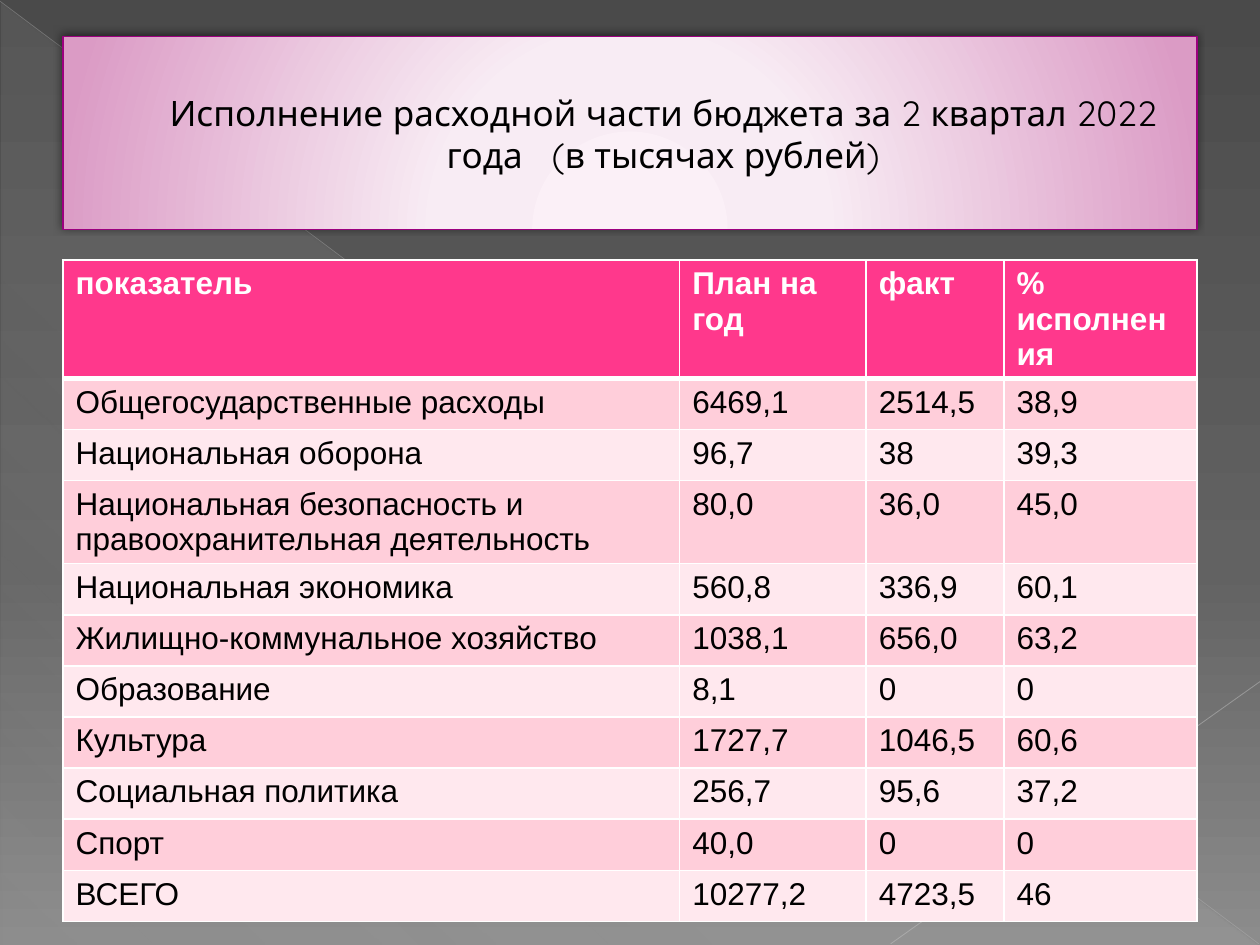
from lxml import etree
from pptx import Presentation
from pptx.dml.color import RGBColor
from pptx.enum.shapes import MSO_CONNECTOR, MSO_SHAPE
from pptx.enum.text import MSO_ANCHOR, PP_ALIGN
from pptx.oxml import parse_xml
from pptx.oxml.ns import qn
from pptx.util import Pt

# Content
TITLE = "Исполнение расходной части бюджета за 2 квартал 2022 года   (в тысячах рублей)"
ROWS = [
    ("показатель", "План на год", "факт", "% исполнения"),
    ("Общегосударственные расходы", "6469,1", "2514,5", "38,9"),
    ("Национальная оборона", "96,7", "38", "39,3"),
    ("Национальная безопасность и правоохранительная деятельность", "80,0", "36,0", "45,0"),
    ("Национальная экономика", "560,8", "336,9", "60,1"),
    ("Жилищно-коммунальное хозяйство", "1038,1", "656,0", "63,2"),
    ("Образование", "8,1", "0", "0"),
    ("Культура", "1727,7", "1046,5", "60,6"),
    ("Социальная политика", "256,7", "95,6", "37,2"),
    ("Спорт", "40,0", "0", "0"),
    ("ВСЕГО", "10277,2", "4723,5", "46"),
]

# Layout, in points
WIDTH, HEIGHT = 720, 540
LEFT = 36
COLUMNS = (352.4, 106.6, 78.8, 110.2)
ROW_HEIGHT = 29.2
# start, end, colour, line width, opacity in percent
RAYS = [
    ((0, 0.7), (719.3, 539.3), RGBColor(0xBF, 0xBF, 0xBF), 0.39, 35),
    ((720, 389.5), (509, 539.3), RGBColor(0xC6, 0xC6, 0xC6), 0.47, 45),
]

# Colours; gradient stops are position, colour, opacity in percent
BLACK = RGBColor(0x00, 0x00, 0x00)
WHITE = RGBColor(0xFF, 0xFF, 0xFF)
PURPLE = RGBColor(0x9C, 0x00, 0x7F)
HEADER = RGBColor(0xFF, 0x38, 0x8C)
BANDS = (RGBColor(0xFF, 0xE8, 0xEE), RGBColor(0xFF, 0xCE, 0xDA))
SHEEN = RGBColor(0xD2, 0xD2, 0xD2)
BACKDROP = [(0, RGBColor(0x4A, 0x4A, 0x4A), 100), (60, RGBColor(0x62, 0x62, 0x62), 100),
            (100, RGBColor(0x8C, 0x8C, 0x8C), 100)]
SHEEN_STOPS = [(0, SHEEN, 10), (70, SHEEN, 8), (100, SHEEN, 1)]
TITLE_STOPS = [(0, RGBColor(0xFB, 0xF0, 0xF7), 100), (34, RGBColor(0xF8, 0xEC, 0xF4), 100),
               (100, RGBColor(0xDB, 0x9B, 0xC5), 100)]
NS = 'xmlns:a="http://schemas.openxmlformats.org/drawingml/2006/main"'


def color_xml(color, alpha=100):
    return f'<a:srgbClr val="{color}"><a:alpha val="{alpha * 1000}"/></a:srgbClr>'


def set_gradient(parent, stops, shade):
    """Replace the solid fill in parent with a gradient."""
    gs = "".join(f'<a:gs pos="{pos * 1000}">{color_xml(c, a)}</a:gs>' for pos, c, a in stops)
    grad = parse_xml(f'<a:gradFill {NS} rotWithShape="1"><a:gsLst>{gs}</a:gsLst>{shade}</a:gradFill>')
    parent.replace(parent.find(qn("a:solidFill")), grad)


def linear(angle):
    return f'<a:lin ang="{angle * 60000}" scaled="0"/>'


def set_text(tf, text, font="Arial", size=18, color=BLACK, bold=False, align=PP_ALIGN.LEFT):
    tf.word_wrap = True
    p = tf.paragraphs[0]
    p.alignment = align
    r = p.add_run()
    r.text = text
    r.font.name, r.font.size, r.font.bold = font, Pt(size), bold
    r.font.color.rgb = color
    return p


def set_borders(cell, widths):
    """Draw white borders, which must stand before the cell's fill."""
    pr = cell._tc.get_or_add_tcPr()
    for i, (side, width) in enumerate(widths.items()):
        pr.insert(i, parse_xml(f'<a:ln{side} {NS} w="{Pt(width)}"><a:solidFill>{color_xml(WHITE)}'
                               f'</a:solidFill></a:ln{side}>'))


def add_box(s, kind, left, top, width, height, stops, shade):
    sp = s.shapes.add_shape(kind, Pt(left), Pt(top), Pt(width), Pt(height))
    sp.shadow.inherit = False
    sp.fill.solid()
    set_gradient(sp._element.spPr, stops, shade)
    return sp


prs = Presentation()
prs.slide_width, prs.slide_height = Pt(WIDTH), Pt(HEIGHT)
s = prs.slides.add_slide(prs.slide_layouts[6])

# Background with sheen and rays
s.background.fill.solid()
set_gradient(s.element.find(".//" + qn("p:bgPr")), BACKDROP, linear(90))
sheen = add_box(s, MSO_SHAPE.RIGHT_TRIANGLE, 0.7, 1.4, 718.6, 538.6, SHEEN_STOPS, linear(133))
sheen.line.fill.background()
for start, end, color, width, alpha in RAYS:
    ray = s.shapes.add_connector(MSO_CONNECTOR.STRAIGHT, *(Pt(v) for v in start + end))
    ray.line.color.rgb, ray.line.width = color, Pt(width)
    clr = ray._element.spPr.find(".//" + qn("a:srgbClr"))
    etree.SubElement(clr, qn("a:alpha"), val=str(alpha * 1000))
    etree.SubElement(ray._element.spPr, qn("a:effectLst"))

# Title panel
radial = '<a:path path="circle"><a:fillToRect l="50000" t="155000" r="50000" b="-55000"/></a:path>'
panel = add_box(s, MSO_SHAPE.RECTANGLE, LEFT, 21, sum(COLUMNS), 110, TITLE_STOPS, radial)
panel.line.color.rgb, panel.line.width = PURPLE, Pt(0.75)
panel._element.spPr.find(qn("a:effectLst")).append(parse_xml(
    f'<a:outerShdw {NS} blurRad="{Pt(5)}" dist="{Pt(2)}" dir="{245 * 60000}" rotWithShape="0">'
    f'{color_xml(BLACK, 50)}</a:outerShdw>'))
panel.text_frame.vertical_anchor = MSO_ANCHOR.MIDDLE
p = set_text(panel.text_frame, TITLE, font="Quicksand", size=20, align=PP_ALIGN.CENTER)
p._p.get_or_add_pPr().set("marL", str(Pt(38)))

# Budget table
table = s.shapes.add_table(len(ROWS), len(COLUMNS), Pt(LEFT), Pt(148.5),
                           Pt(sum(COLUMNS)), Pt(ROW_HEIGHT * len(ROWS))).table
for column, width in zip(table.columns, COLUMNS):
    column.width = Pt(width)
for i, values in enumerate(ROWS):
    table.rows[i].height = Pt(ROW_HEIGHT)
    header = i == 0
    for j, value in enumerate(values):
        cell = table.cell(i, j)
        cell.fill.solid()
        cell.fill.fore_color.rgb = HEADER if header else BANDS[i % 2]
        set_borders(cell, {"L": 1, "R": 1, "T": 3 if i == 1 else 1, "B": 3 if header else 1})
        set_text(cell.text_frame, value, color=WHITE if header else BLACK, bold=header)

prs.save("out.pptx")
